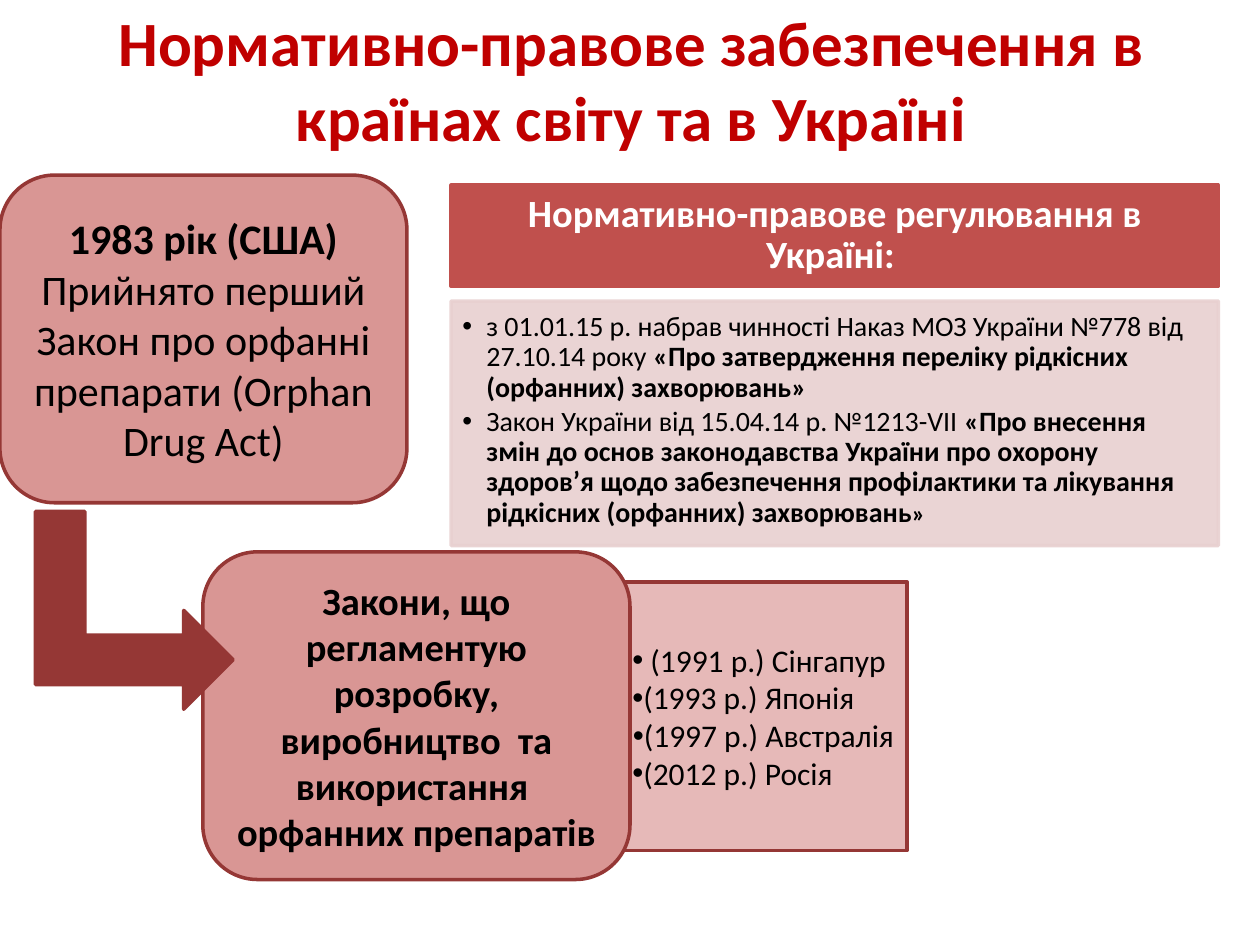
import pptx
import pptx.dml.color
import pptx.enum.shapes
import pptx.enum.text
import pptx.oxml
import pptx.oxml.ns
import pptx.util

SHAPES = pptx.enum.shapes.MSO_SHAPE
ALIGN = pptx.enum.text.PP_ALIGN
ANCHOR = pptx.enum.text.MSO_ANCHOR
color = pptx.dml.color.RGBColor.from_string
inches = pptx.util.Inches

presentation = pptx.Presentation()
presentation.slide_width = inches(10)
presentation.slide_height = inches(7.5)
slide = presentation.slides.add_slide(presentation.slide_layouts[6])
column = presentation.slide_width / 100   # positions are percent of the slide
row = presentation.slide_height / 100


def add_box(kind, left, top, width, height, fill=None, line=None,
            insets=(0.1, 0.05, 0.1, 0.05), anchor=ANCHOR.MIDDLE):
    """Place a shape on the percent grid; without a fill it only holds text."""
    shape = slide.shapes.add_shape(kind, round(left * column), round(top * row),
                                   round(width * column), round(height * row))
    shape.shadow.inherit = False
    if fill:
        shape.fill.solid()
        shape.fill.fore_color.rgb = color(fill)
        shape.line.color.rgb = color(line)
        shape.line.width = pptx.util.Pt(2)
    else:
        shape.fill.background()
        shape.line.fill.background()
    frame = shape.text_frame
    frame.word_wrap = True
    frame.vertical_anchor = anchor
    (frame.margin_left, frame.margin_top,
     frame.margin_right, frame.margin_bottom) = map(inches, insets)
    return shape


def add_paragraph(shape, runs, size, ink="000000", align=ALIGN.CENTER,
                  hanging=None, spacing=1.0, after=0):
    """Add (text, bold) runs; a hanging indent, even of zero, brings a bullet."""
    frame = shape.text_frame
    paragraph = frame.paragraphs[0]
    if paragraph.runs:
        paragraph = frame.add_paragraph()
    paragraph.alignment = align
    paragraph.line_spacing = spacing
    paragraph.space_after = pptx.util.Pt(after)
    for text, bold in runs:
        run = paragraph.add_run()
        run.text = text
        run.font.name = "Calibri"
        run.font.size = pptx.util.Pt(size)
        run.font.bold = bold
        run.font.color.rgb = color(ink)
    if hanging is not None:
        properties = paragraph._p.get_or_add_pPr()
        properties.set("marL", str(inches(hanging)))
        properties.set("indent", str(-inches(hanging)))
        for tag, name, value in (("a:buFont", "typeface", "Arial"),
                                 ("a:buChar", "char", "•")):
            bullet = pptx.oxml.parse_xml(f'<{tag} {pptx.oxml.ns.nsdecls("a")}/>')
            bullet.set(name, value)
            properties.append(bullet)
    return paragraph


# Countries with later laws
countries = add_box(SHAPES.RECTANGLE, 49.2, 61.6, 22.8, 28.4, "E6B9B8", "953735")
for text, align in ((" (1991 р.) Сінгапур", ALIGN.LEFT),
                    ("(1993 р.) Японія", ALIGN.LEFT),
                    ("(1997 р.) Австралія", ALIGN.CENTER),
                    ("(2012 р.) Росія", ALIGN.LEFT)):
    add_paragraph(countries, [(text, False)], 18, align=align, hanging=0)

# Title
title = add_box(SHAPES.RECTANGLE, 5.1, 0, 90, 16.67)
add_paragraph(title, [("Нормативно-правове забезпечення в країнах світу та в Україні", True)],
              36, "C00000")

# Ukrainian regulation: header
header = add_box(SHAPES.RECTANGLE, 35.8, 19.6, 60.9, 10.67, "C0504D", "C0504D",
                 insets=(0.17, 0.1, 0.17, 0.1))
add_paragraph(header, [("Нормативно-правове регулювання в Україні: ", True)],
              22, "FFFFFF", spacing=0.9, after=7.7)

# Ukrainian regulation: translucent body
body = add_box(SHAPES.RECTANGLE, 35.8, 31.87, 60.9, 25.87, "E8D0D0", "E8D0D0",
               insets=(0.09, 0.09, 0.12, 0.14), anchor=ANCHOR.TOP)
for swatch in body._element.spPr.iter(pptx.oxml.ns.qn("a:srgbClr")):
    swatch.append(pptx.oxml.parse_xml(
        f'<a:alpha {pptx.oxml.ns.nsdecls("a")} val="90000"/>'))
regulations = (
    [("з 01.01.15 р. набрав чинності Наказ МОЗ України №778 від 27.10.14 року ", False),
     ("«Про затвердження переліку рідкісних (орфанних) захворювань»", True)],
    [("Закон України від 15.04.14 р. №1213-VII ", False),
     ("«Про внесення змін до основ законодавства України про охорону здоров’я "
      "щодо забезпечення профілактики та лікування рідкісних (орфанних) захворювань", True),
     ("»", True)],
)
for runs in regulations:
    paragraph = add_paragraph(body, runs, 16, align=ALIGN.LEFT, hanging=0.19,
                              spacing=0.9, after=2.4)
paragraph.runs[-1].font.size = pptx.util.Pt(14)   # smaller closing quote

# First law, USA
first_law = add_box(SHAPES.ROUNDED_RECTANGLE, 0, 18.53, 32.3, 34.67, "D99694", "953735")
add_paragraph(first_law, [("1983 рік (США)", True)], 24)
add_paragraph(first_law, [("Прийнято перший Закон про орфанні препарати (Orphan Drug Act)", False)], 24)

# Laws that followed
later_laws = add_box(SHAPES.ROUNDED_RECTANGLE, 16.1, 58.4, 33.9, 34.67, "D99694", "953735")
add_paragraph(later_laws, [("Закони, що регламентую розробку, виробництво  та "
                            "використання  орфанних препаратів", True)], 22)

# Arrow from the first law to the later ones
arrow = add_box(SHAPES.BENT_UP_ARROW, 2.8, 54.13, 15.7, 20.93, "953735", "953735")
arrow.rotation = 90

presentation.save("out.pptx")
